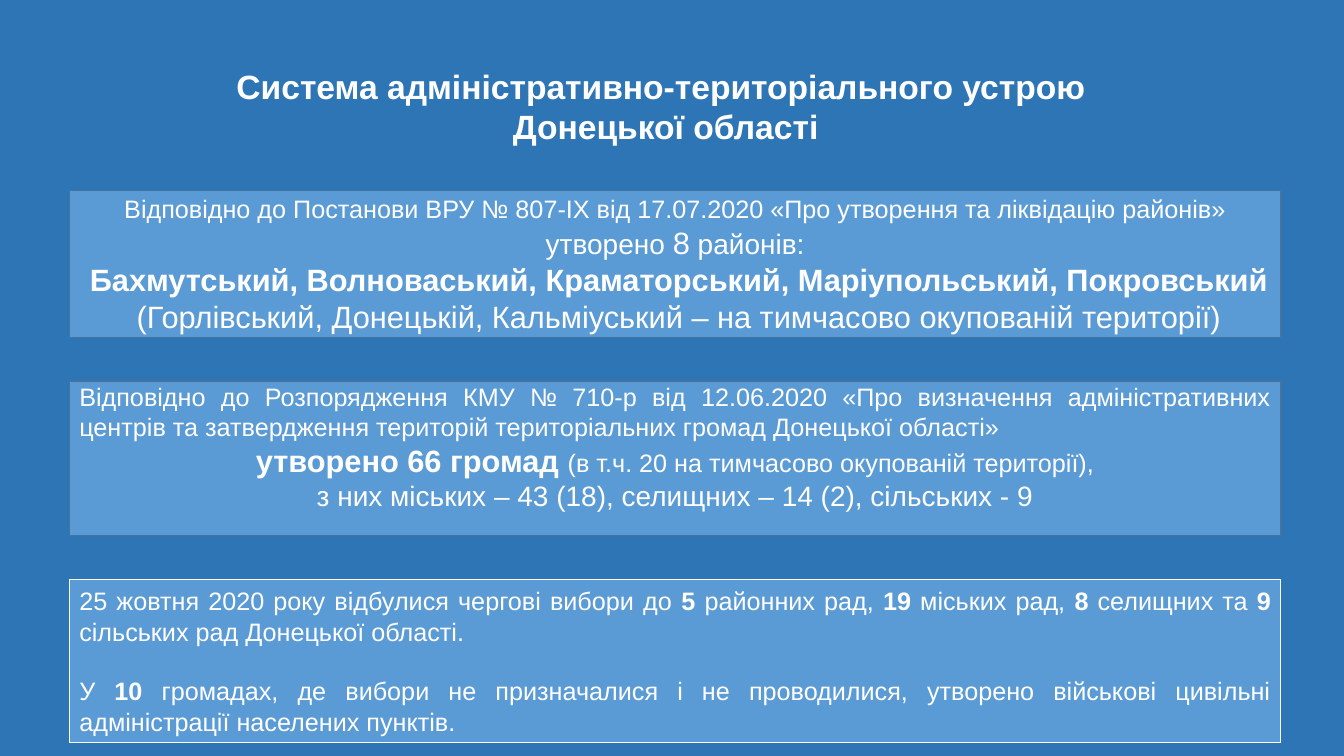
"""Build a slide on the administrative and territorial system of Donetsk region."""
from pptx import Presentation
from pptx.dml.color import RGBColor
from pptx.enum.shapes import MSO_SHAPE as Shape
from pptx.enum.text import MSO_ANCHOR as Anchor, MSO_AUTO_SIZE as AutoSize, PP_ALIGN as Align
from pptx.util import Cm, Pt

COLORS = {
    "background": "2E75B6",
    "panel": "5B9BD5",
    "border": "43739E",
    "white": "FFFFFF",
}
FONT = "Arial"
PANEL_LEFT, PANEL_WIDTH = Cm(1.75), Cm(30.53)

TITLE = [
    (Align.CENTER, [("Система адміністративно-територіального устрою ", 24, True)]),
    (Align.CENTER, [("Донецької області", 24, True)]),
]
DISTRICTS = [
    (Align.CENTER, [
        ("Відповідно до Постанови ВРУ № 807-ІХ від 17.07.2020 "
         "«Про утворення та ліквідацію районів»", 18, False),
    ]),
    (Align.CENTER, [("утворено ", 20, False), ("8", 22, False), (" районів:", 20, False)]),
    (Align.CENTER, [
        (" ", 20, True),
        ("Бахмутський, Волноваський, Краматорський, Маріупольський, Покровський", 22, True),
    ]),
    (Align.CENTER, [
        (" ", 20, False),
        ("(Горлівський, Донецькій, Кальміуський – на тимчасово окупованій території)", 22, False),
    ]),
]
COMMUNITIES = [
    (Align.JUSTIFY, [
        ("Відповідно до Розпорядження КМУ № 710-р від 12.06.2020 «Про визначення "
         "адміністративних центрів та затвердження територій територіальних громад "
         "Донецької області»", 18, False),
    ]),
    (Align.CENTER, [
        (" ", 18, True),
        ("утворено 66 громад ", 22, True),
        ("(в т.ч. 20 на тимчасово окупованій території), ", 18, False),
    ]),
    (Align.CENTER, [("з них міських – 43 (18), селищних – 14 (2), сільських - 9", 20, False)]),
]
ELECTIONS = [
    (Align.JUSTIFY, [
        ("25 жовтня 2020 року відбулися чергові вибори до ", 18, False),
        ("5", 18, True), (" районних рад, ", 18, False),
        ("19", 18, True), (" міських рад, ", 18, False),
        ("8", 18, True), (" селищних та ", 18, False),
        ("9", 18, True), (" сільських рад Донецької області.", 18, False),
    ]),
    (Align.JUSTIFY, [
        ("У ", 18, False), ("10", 18, True),
        (" громадах, де вибори не призначалися і не проводилися, утворено "
         "військові цивільні адміністрації населених пунктів.", 18, False),
    ]),
]


def color(name):
    """Return the named colour."""
    return RGBColor.from_string(COLORS[name])


def write_text(shape, paragraphs, anchor=Anchor.MIDDLE):
    """Fill a shape with aligned paragraphs of (text, size, bold) runs."""
    frame = shape.text_frame
    frame.word_wrap = True
    frame.auto_size = AutoSize.NONE
    frame.vertical_anchor = anchor
    for index, (alignment, runs) in enumerate(paragraphs):
        paragraph = frame.add_paragraph() if index else frame.paragraphs[0]
        paragraph.alignment = alignment
        for text, size, bold in runs:
            run = paragraph.add_run()
            run.text = text
            run.font.name = FONT
            run.font.size = Pt(size)
            run.font.bold = bold
            run.font.color.rgb = color("white")


def place_title(slide):
    """Move, fill and write the title placeholder."""
    title = slide.shapes.title
    title.left, title.top, title.width, title.height = Cm(0.58), Cm(1.45), Cm(32.39), Cm(2.44)
    title.fill.solid()
    title.fill.fore_color.rgb = color("background")
    write_text(title, TITLE)


def add_panel(slide, top, height, paragraphs, border="border", line_width=1, anchor=Anchor.MIDDLE):
    """Add a light blue text panel and return it."""
    panel = slide.shapes.add_shape(Shape.RECTANGLE, PANEL_LEFT, top, PANEL_WIDTH, height)
    panel.shadow.inherit = False
    panel.fill.solid()
    panel.fill.fore_color.rgb = color("panel")
    panel.line.color.rgb = color(border)
    panel.line.width = Pt(line_width)
    write_text(panel, paragraphs, anchor)
    return panel


def main():
    """Create the presentation and save it."""
    presentation = Presentation()
    presentation.slide_width, presentation.slide_height = Cm(33.87), Cm(19.05)
    slide = presentation.slides.add_slide(presentation.slide_layouts[5])
    slide.background.fill.solid()
    slide.background.fill.fore_color.rgb = color("background")

    place_title(slide)
    add_panel(slide, Cm(4.8), Cm(3.71), DISTRICTS)
    communities = add_panel(slide, Cm(9.6), Cm(3.89), COMMUNITIES, anchor=Anchor.TOP)
    communities.text_frame.margin_top = Cm(0)
    elections = add_panel(slide, Cm(14.6), Cm(4.11), ELECTIONS, "white", 0.75)
    elections.text_frame.paragraphs[1].space_before = Pt(21)

    presentation.save("out.pptx")


if __name__ == "__main__":
    main()
